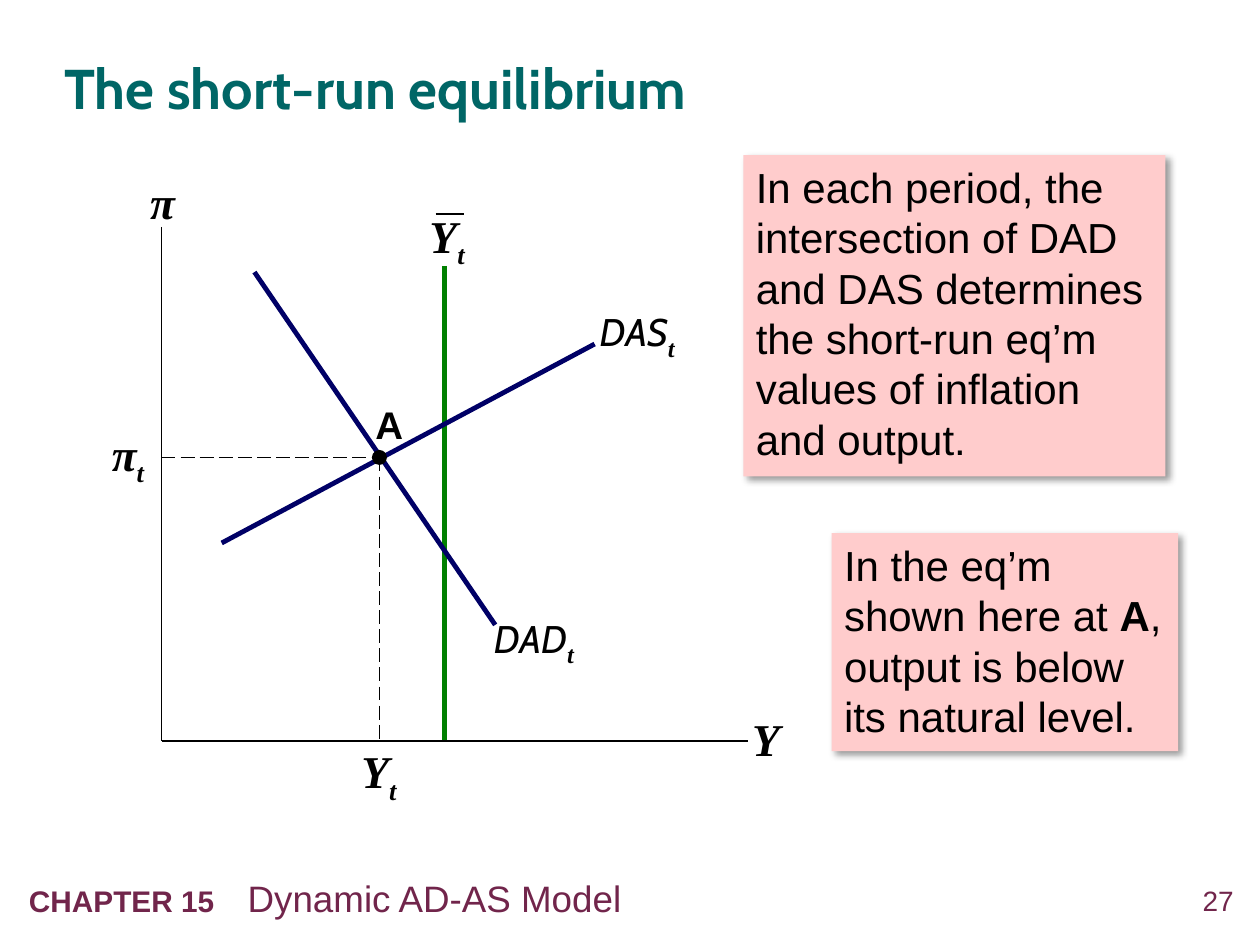
from dataclasses import dataclass

from lxml.etree import SubElement
from pptx import Presentation
from pptx.dml.color import RGBColor
from pptx.enum.dml import MSO_LINE
from pptx.enum.shapes import MSO_CONNECTOR, MSO_SHAPE
from pptx.enum.text import MSO_ANCHOR, PP_ALIGN
from pptx.oxml import parse_xml
from pptx.oxml.ns import qn
from pptx.util import Pt


@dataclass(frozen=True)
class Theme:
    """Colours, fonts and type sizes of the slide."""
    black: str = "000000"
    teal: str = "006666"
    plum: str = "71254B"
    navy: str = "000066"
    green: str = "008000"
    pink: str = "FFCCCC"
    sans: str = "Arial"
    display: str = "Cabin"
    math: str = "Times New Roman"
    title: int = 32
    variable: int = 26
    note: int = 24
    subscript: int = 24
    curve: int = 22
    topic: int = 21
    chapter: int = 17
    page: int = 16


THEME = Theme()
DEFAULT_INSETS = (7.2, 3.6, 7.2, 3.6)
NO_INSETS = (0, 0, 0, 0)


def style(font, face=None, size=None, color=None, bold=None, italic=None):
    """Apply the given font properties."""
    if face:
        font.name = face
    if size:
        font.size = Pt(size)
    if color:
        font.color.rgb = RGBColor.from_string(color)
    if bold is not None:
        font.bold = bold
    if italic is not None:
        font.italic = italic


def prepare(frame, insets=DEFAULT_INSETS, align=PP_ALIGN.LEFT, anchor=MSO_ANCHOR.TOP):
    """Set up a wrapping text frame and return its paragraph."""
    frame.word_wrap = True
    frame.vertical_anchor = anchor
    frame.margin_left, frame.margin_top, frame.margin_right, frame.margin_bottom = map(Pt, insets)
    paragraph = frame.paragraphs[0]
    paragraph.alignment = align
    return paragraph


def add_text(slide, box, **layout):
    """Add a text box and return its paragraph."""
    return prepare(slide.shapes.add_textbox(*map(Pt, box)).text_frame, **layout)


def add_run(paragraph, text, **font):
    """Append a run with its own font differences."""
    run = paragraph.add_run()
    run.text = text
    style(run.font, **font)
    return run


def add_subscript(paragraph, **font):
    """Append the period subscript."""
    run = add_run(paragraph, "t", **font)
    run._r.get_or_add_rPr().set("baseline", "-25000")


def add_variable(slide, box, symbol, dated=True, **layout):
    """Label a variable, with a period subscript when dated."""
    paragraph = add_text(slide, box, **layout)
    style(paragraph.font, THEME.math, THEME.variable, THEME.black, True, True)
    add_run(paragraph, symbol)
    if dated:
        add_subscript(paragraph)


def add_curve_label(slide, left, top, name):
    """Label a curve with its name and period."""
    paragraph = add_text(slide, (left, top, 55.4, 33.8), insets=(0, 0, 0, 7.2))
    style(paragraph.font, color=THEME.black, italic=True)
    add_run(paragraph, name, face=THEME.display, size=THEME.curve)
    add_subscript(paragraph, face=THEME.math, size=THEME.subscript, bold=True)


def add_line(slide, start, end, color=THEME.black, width=1, dashed=False):
    """Draw a straight line between two points."""
    line = slide.shapes.add_connector(MSO_CONNECTOR.STRAIGHT, *map(Pt, (*start, *end)))
    line.line.color.rgb = RGBColor.from_string(color)
    line.line.width = Pt(width)
    if dashed:
        line.line.dash_style = MSO_LINE.LONG_DASH
    SubElement(line._element.spPr, qn("a:effectLst"))


def add_filled(slide, preset, box, color):
    """Add a borderless filled shape without shadow."""
    shape = slide.shapes.add_shape(preset, *map(Pt, box))
    shape.shadow.inherit = False
    shape.fill.solid()
    shape.fill.fore_color.rgb = RGBColor.from_string(color)
    shape.line.fill.background()
    return shape


def add_note(slide, box, *parts):
    """Add a shadowed note whose parts are pairs of text and boldness."""
    note = add_filled(slide, MSO_SHAPE.RECTANGLE, box, THEME.pink)
    effects = note._element.spPr.find(qn("a:effectLst"))
    effects.append(parse_xml(
        '<a:outerShdw xmlns:a="http://schemas.openxmlformats.org/drawingml/2006/main" '
        f'blurRad="{Pt(4)}" dist="{Pt(3)}" dir="2700000" algn="tl" rotWithShape="0">'
        f'<a:srgbClr val="{THEME.black}"><a:alpha val="40000"/></a:srgbClr></a:outerShdw>'))
    paragraph = prepare(note.text_frame)
    style(paragraph.font, THEME.sans, THEME.note, THEME.black)
    for text, bold in parts:
        add_run(paragraph, text, bold=bold)


def add_title(slide):
    """Add the slide title."""
    title = add_text(slide, (36.7, 18.7, 649.4, 59.8), insets=NO_INSETS, anchor=MSO_ANCHOR.MIDDLE)
    title.line_spacing = 1.05
    style(title.font, THEME.display, THEME.title, THEME.teal, True)
    add_run(title, "The short-run equilibrium")


def add_footer(slide):
    """Add the page number and the chapter line."""
    page = add_text(slide, (665.3, 504.7, 39.6, 23), insets=NO_INSETS, align=PP_ALIGN.RIGHT)
    style(page.font, THEME.sans, THEME.page, THEME.plum)
    add_run(page, "27")
    chapter = add_text(slide, (9.4, 496.8, 589, 32.4))
    style(chapter.font, THEME.sans, color=THEME.plum)
    tabs = parse_xml(
        '<a:tabLst xmlns:a="http://schemas.openxmlformats.org/drawingml/2006/main">'
        f'<a:tab pos="{Pt(125)}" algn="l"/></a:tabLst>')
    chapter._p.get_or_add_pPr().insert(0, tabs)
    add_run(chapter, "CHAPTER 15\t", size=THEME.chapter, bold=True)
    add_run(chapter, "Dynamic AD-AS Model", size=THEME.topic, bold=False)


def add_diagram(slide):
    """Draw the axes, curves and equilibrium."""
    axis_x, axis_y = 92.3, 423.5
    output, inflation = 216.8, 261.4
    natural, radius = 254.2, 4.3

    add_line(slide, (natural, 151.9), (natural, axis_y + 0.5), THEME.green, 2.75)
    add_variable(slide, (238.3, 115.2, 37.4, 38.9), "Y")
    add_line(slide, (249, 122.4), (265, 122.4), width=1.25)

    add_variable(slide, (51.1, 239.8, 43.9, 38.9), "π", align=PP_ALIGN.CENTER)
    add_variable(slide, (199.4, 421.2, 41, 38.9), "Y")

    add_line(slide, (axis_x, 129.6), (axis_x, axis_y))
    add_line(slide, (axis_x, axis_y), (427.7, axis_y))
    add_variable(slide, (429.8, 406.1, 32.4, 35.3), "Y", dated=False, insets=(0, 0, 0, 3.6))
    add_variable(slide, (72, 95.8, 41.8, 38.9), "π", dated=False, align=PP_ALIGN.CENTER)

    add_curve_label(slide, 282.2, 349.2, "DAD")
    add_line(slide, (145.4, 155.5), (283, 357.1), THEME.navy, 2.75)
    add_line(slide, (126.7, 310.3), (339.8, 196.6), THEME.navy, 2.75)
    add_curve_label(slide, 342.7, 174.2, "DAS")

    add_line(slide, (axis_x, inflation), (output, inflation), dashed=True)
    add_line(slide, (output, inflation), (output, axis_y), dashed=True)
    add_filled(slide, MSO_SHAPE.OVAL,
               (output - radius, inflation - radius, 2 * radius, 2 * radius), THEME.black)
    point = add_text(slide, (207.4, 225.4, 29.5, 33.8))
    style(point.font, THEME.sans, THEME.curve, THEME.black, True)
    add_run(point, "A")


def main():
    """Build and save the slide."""
    deck = Presentation()
    deck.slide_width, deck.slide_height = Pt(720), Pt(540)
    slide = deck.slides.add_slide(deck.slide_layouts[6])
    add_footer(slide)
    add_title(slide)
    add_note(slide, (424.8, 88.6, 241.2, 183.6),
             ("In each period, the intersection of DAD and DAS determines the "
              "short-run eq’m values of inflation and output.", False))
    add_diagram(slide)
    add_note(slide, (475.2, 304.6, 198, 124.6),
             ("In the eq’m shown here at ", False), ("A", True),
             (", output is below its natural level.", False))
    deck.save("out.pptx")


if __name__ == "__main__":
    main()
